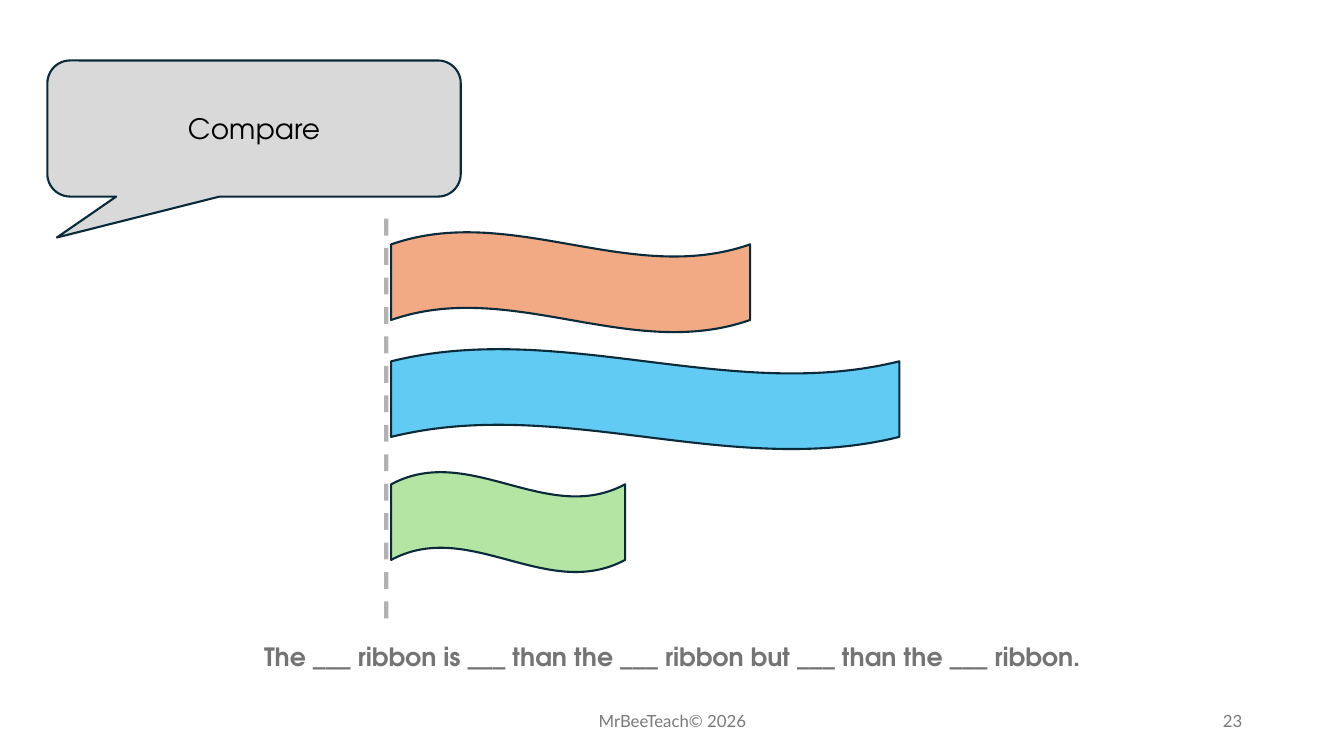
import pptx
import pptx.util
import pptx.dml.color
import pptx.enum.dml
import pptx.enum.shapes
import pptx.enum.text
import pptx.oxml
from dataclasses import dataclass
from pptx.util import Inches


@dataclass(frozen=True)
class Theme:
    heading_font: str = "TeX Gyre Adventor"
    footer_font: str = "Lato"
    heading_size: int = 20
    sentence_size: int = 18
    footer_size: int = 12
    ink: str = "000000"
    sentence: str = "747474"
    footer: str = "797979"
    outline: str = "092A39"
    bubble: str = "D9D9D9"
    orange: str = "F2AA84"
    blue: str = "61CBF4"
    green: str = "B4E5A2"


theme = Theme()
HEADING = "Compare"
SENTENCE = "The ___ ribbon is ___ than the ___ ribbon but ___ than the ___ ribbon."
FOOTER = "MrBeeTeach© 2026"
PAGE = "23"
RIBBONS = [
    {"top": 2.3, "length": 3.56, "color": theme.orange},
    {"top": 3.46, "length": 5.04, "color": theme.blue},
    {"top": 4.68, "length": 2.32, "color": theme.green},
]
RIBBON_LEFT, RIBBON_HEIGHT = 3.88, 1
BUBBLE_BOX = (0.47, 0.6, 4.1, 1.35)
BUBBLE_POINTS = (-0.477, 0.801, 0.167)
GUIDE_X, GUIDE_TOP, GUIDE_BOTTOM = 3.83, 2.17, 6.16

ALIGN = pptx.enum.text.PP_ALIGN
ANCHOR = pptx.enum.text.MSO_ANCHOR
SHAPE = pptx.enum.shapes.MSO_SHAPE


def rgb(color):
    return pptx.dml.color.RGBColor.from_string(color)


def write_text(shape, text, *, size, color, font=theme.heading_font, bold=False,
               align=ALIGN.CENTER, anchor=ANCHOR.MIDDLE):
    frame = shape.text_frame
    frame.word_wrap = True
    frame.vertical_anchor = anchor
    paragraph = frame.paragraphs[0]
    paragraph.alignment = align
    run = paragraph.add_run()
    run.text = text
    run.font.name = font
    run.font.size = pptx.util.Pt(size)
    run.font.bold = bold
    run.font.color.rgb = rgb(color)


def add_outlined(slide, kind, box, fill):
    shape = slide.shapes.add_shape(kind, *map(Inches, box))
    shape.shadow.inherit = False
    shape.fill.solid()
    shape.fill.fore_color.rgb = rgb(fill)
    shape.line.color.rgb = rgb(theme.outline)
    shape.line.width = pptx.util.Pt(1.5)
    return shape


def add_label(slide, box, text, **text_format):
    label = slide.shapes.add_textbox(*map(Inches, box))
    write_text(label, text, **text_format)


def add_guide(slide):
    guide = slide.shapes.add_connector(
        pptx.enum.shapes.MSO_CONNECTOR.STRAIGHT,
        *map(Inches, (GUIDE_X, GUIDE_TOP, GUIDE_X, GUIDE_BOTTOM)))
    guide.line.color.rgb = rgb(theme.ink)
    guide.line.width = pptx.util.Pt(3)
    guide.line.dash_style = pptx.enum.dml.MSO_LINE.DASH
    properties = guide._element.spPr
    color = properties.find(".//" + pptx.oxml.ns.qn("a:srgbClr"))
    alpha = pptx.oxml.xmlchemy.OxmlElement("a:alpha")
    alpha.set("val", "30000")
    color.append(alpha)
    properties.append(pptx.oxml.xmlchemy.OxmlElement("a:effectLst"))


def main():
    presentation = pptx.Presentation()
    presentation.slide_width = Inches(13.33)
    presentation.slide_height = Inches(7.5)
    slide = presentation.slides.add_slide(presentation.slide_layouts[6])

    bubble = add_outlined(slide, SHAPE.ROUNDED_RECTANGULAR_CALLOUT, BUBBLE_BOX, theme.bubble)
    for index, value in enumerate(BUBBLE_POINTS):
        bubble.adjustments[index] = value
    write_text(bubble, HEADING, size=theme.heading_size, color=theme.ink)

    add_guide(slide)
    for ribbon in RIBBONS:
        box = (RIBBON_LEFT, ribbon["top"], ribbon["length"], RIBBON_HEIGHT)
        add_outlined(slide, SHAPE.WAVE, box, ribbon["color"])

    add_label(slide, (2.4, 6.31, 8.54, 0.4), SENTENCE, size=theme.sentence_size,
              color=theme.sentence, bold=True, anchor=ANCHOR.TOP)
    footer_format = {"size": theme.footer_size, "color": theme.footer, "font": theme.footer_font}
    add_label(slide, (4.42, 6.95, 4.5, 0.4), FOOTER, **footer_format)
    add_label(slide, (9.42, 6.95, 3, 0.4), PAGE, align=ALIGN.RIGHT, **footer_format)
    presentation.save("out.pptx")


if __name__ == "__main__":
    main()
